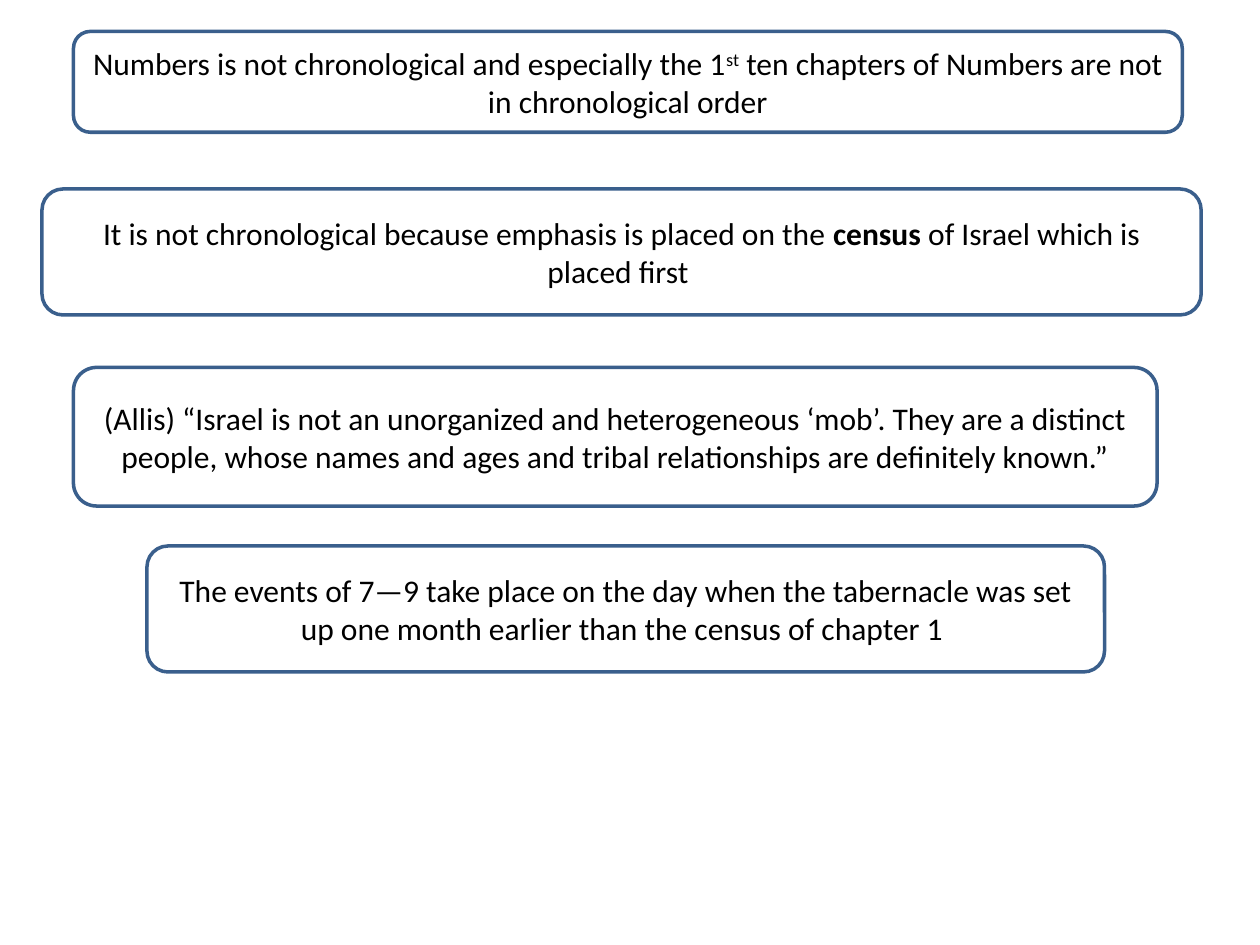
"""Build a slide of four rounded statements on the chronology of Numbers."""
from pptx import Presentation
from pptx.dml.color import RGBColor
from pptx.enum.shapes import MSO_SHAPE
from pptx.enum.text import MSO_ANCHOR, PP_ALIGN
from pptx.util import Inches, Pt

ROUNDED = MSO_SHAPE.ROUNDED_RECTANGLE
MIDDLE = MSO_ANCHOR.MIDDLE
CENTER = PP_ALIGN.CENTER

WHITE = RGBColor(0xFF, 0xFF, 0xFF)
BLACK = RGBColor(0x00, 0x00, 0x00)
BORDER_BLUE = RGBColor(0x3A, 0x5F, 0x8C)

SLIDE_WIDTH, SLIDE_HEIGHT = Inches(10), Inches(7.5)
COLUMNS, ROWS = 120, 90

STATEMENTS = [
    ((7, 3, 105.6, 9.6), [
        ("Numbers is not chronological and especially the 1", {}),
        ("st", {"baseline": 30}),
        (" ten chapters of Numbers are not in chronological order", {}),
    ]),
    ((14, 52, 91.2, 12), [
        ("The events of 7—9 take place on the day when the tabernacle was set "
         "up one month earlier than the census of chapter 1 ", {}),
    ]),
    ((4, 18, 110.4, 12), [
        ("It is not chronological because emphasis is placed on the ", {}),
        ("census ", {"bold": True}),
        ("of Israel which is placed first ", {}),
    ]),
    ((7, 35, 103.2, 13.2), [
        ("(Allis) “Israel is not an unorganized and heterogeneous ‘mob’. "
         "They are a distinct people, whose names and ages and tribal "
         "relationships are definitely known.”", {}),
    ]),
]


def grid_box(column, row, columns, rows):
    """Turn grid columns and rows into left, top, width and height."""
    across, down = SLIDE_WIDTH / COLUMNS, SLIDE_HEIGHT / ROWS
    return [round(length) for length in
            (column * across, row * down, columns * across, rows * down)]


def add_text(paragraph, text, size=18, bold=False, color=BLACK, baseline=0):
    """Append a formatted run, raised by baseline percent."""
    run = paragraph.add_run()
    run.text = text
    font = run.font
    font.name = "Calibri"
    font.size = Pt(size)
    font.bold = bold
    font.color.rgb = color
    if baseline:
        run._r.get_or_add_rPr().set("baseline", str(baseline * 1000))


def add_statement(slide, box, runs):
    """Add a bordered rounded box holding one centred statement."""
    shape = slide.shapes.add_shape(ROUNDED, *grid_box(*box))
    shape.shadow.inherit = False
    shape.fill.solid()
    shape.fill.fore_color.rgb = WHITE
    shape.line.color.rgb = BORDER_BLUE
    shape.line.width = Pt(2)
    frame = shape.text_frame
    frame.word_wrap = True
    frame.vertical_anchor = MIDDLE
    paragraph = frame.paragraphs[0]
    paragraph.alignment = CENTER
    for text, text_format in runs:
        add_text(paragraph, text, **text_format)


def main():
    """Create the presentation and save it."""
    presentation = Presentation()
    presentation.slide_width = SLIDE_WIDTH
    presentation.slide_height = SLIDE_HEIGHT
    slide = presentation.slides.add_slide(presentation.slide_layouts[6])
    for box, runs in STATEMENTS:
        add_statement(slide, box, runs)
    presentation.save("out.pptx")


if __name__ == "__main__":
    main()
